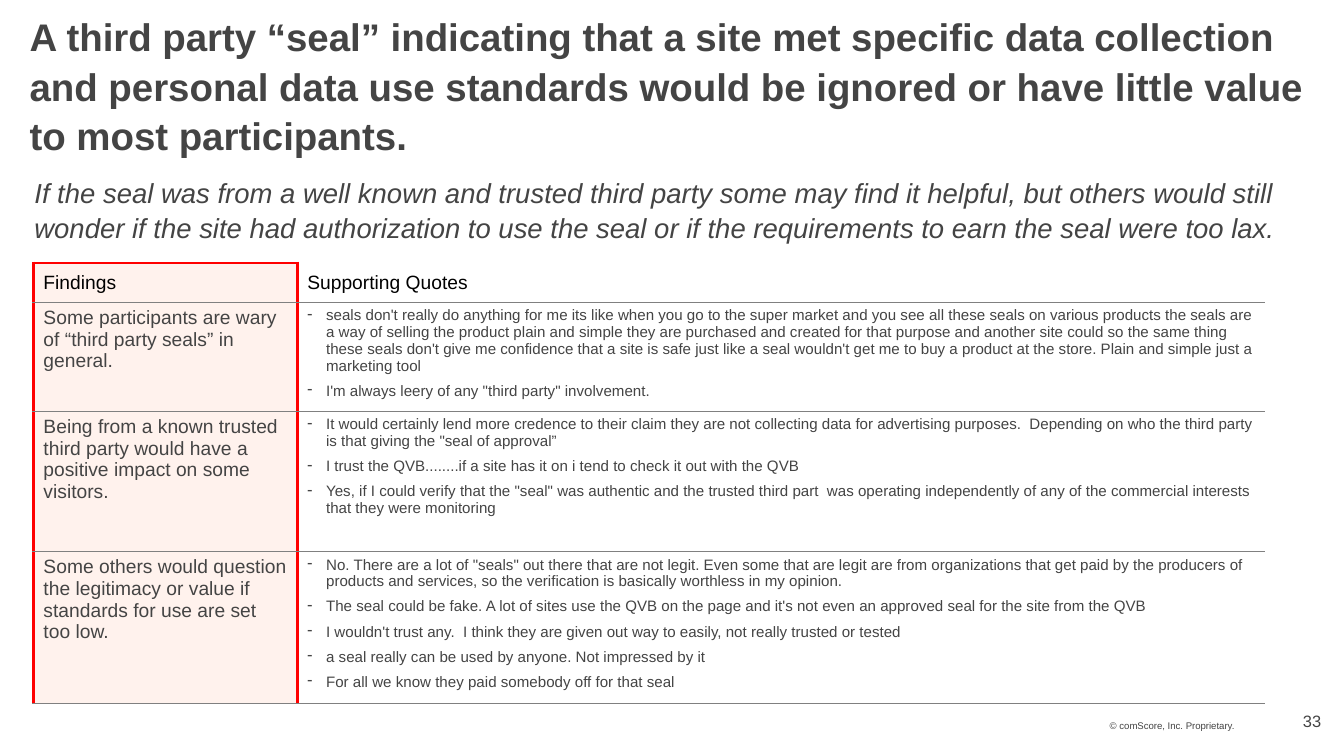
from lxml import etree
from pptx import Presentation, util as u
from pptx.dml.color import RGBColor
from pptx.enum import text
from pptx.oxml.ns import qn

PX = 9144  # 100 px to the inch
COLORS = {"ink": "444444", "head": "000000", "red": "FF0000", "rule": "808080", "peach": "FFCFB8"}


def add_run(p, words, size, color="ink", bold=False, italic=False):
    r = p.add_run()
    r.text = words
    f = r.font
    f.name, f.size, f.bold, f.italic = "Arial", u.Pt(size), bold, italic
    f.color.rgb = RGBColor.from_string(COLORS[color])


def set_border(cell, side, color, width):
    """Draw one cell side (L, R, T or B), or clear it when color is None."""
    tcPr = cell._tc.get_or_add_tcPr()
    ln = etree.SubElement(tcPr, qn("a:ln" + side), w=str(u.Pt(width)))
    if color is None:
        etree.SubElement(ln, qn("a:noFill"))
    else:
        fill = etree.SubElement(ln, qn("a:solidFill"))
        etree.SubElement(fill, qn("a:srgbClr"), val=COLORS[color])


findings = [
    ("Some participants are wary of “third party seals” in general.", [
        "seals don't really do anything for me its like when you go to the super market and you see all "
        "these seals on various products the seals are a way of selling the product plain and simple they "
        "are purchased and created for that purpose and another site could so the same thing these seals "
        "don't give me confidence that a site is safe just like a seal wouldn't get me to buy a product at "
        "the store. Plain and simple just a marketing tool",
        "I'm always leery of any \"third party\" involvement.",
    ]),
    ("Being from a known trusted third party would have a positive impact on some visitors.", [
        "It would certainly lend more credence to their claim they are not collecting data for advertising "
        "purposes.  Depending on who the third party is that giving the \"seal of approval”",
        "I trust the QVB........if a site has it on i tend to check it out with the QVB",
        "Yes, if I could verify that the \"seal\" was authentic and the trusted third part  was operating "
        "independently of any of the commercial interests that they were monitoring",
    ]),
    ("Some others would question the legitimacy or value if standards for use are set too low.", [
        "No. There are a lot of \"seals\" out there that are not legit. Even some that are legit are from "
        "organizations that get paid by the producers of products and services, so the verification is "
        "basically worthless in my opinion.",
        "The seal could be fake. A lot of sites use the QVB on the page and it's not even an approved seal "
        "for the site from the QVB",
        "I wouldn't trust any.  I think they are given out way to easily, not really trusted or tested",
        "a seal really can be used by anyone. Not impressed by it",
        "For all we know they paid somebody off for that seal",
    ]),
]

prs = Presentation()
prs.slide_width, prs.slide_height = 1360 * PX, 765 * PX
s = prs.slides.add_slide(prs.slide_layouts[5])

# Title
title = s.shapes.title
title.left, title.top, title.width, title.height = (v * PX for v in (18, 14, 1342, 148))
tf = title.text_frame
tf.auto_size, tf.word_wrap = text.MSO_AUTO_SIZE.NONE, True
tf.vertical_anchor = text.MSO_ANCHOR.MIDDLE
tf.margin_left = tf.margin_right = 12 * PX
tf.margin_top, tf.margin_bottom = 0, 6 * PX
p = tf.paragraphs[0]
p.alignment, p.line_spacing = text.PP_ALIGN.LEFT, 1.07
add_run(p, "A third party “seal” indicating that a site met specific data collection and personal data use "
           "standards would be ignored or have little value to most participants.", 28, bold=True)

# Subtitle
sp = s.shapes.add_textbox(*(v * PX for v in (25, 171, 1324, 77)))
tf = sp.text_frame
tf.word_wrap = True
p = tf.paragraphs[0]
p.line_spacing = 1.07
add_run(p, "If the seal was from a well known and trusted third party some may find it helpful, but others "
           "would still wonder if the site had authorization to use the seal or if the requirements to earn "
           "the seal were too lax.", 20, italic=True)

# Findings table
table = s.shapes.add_table(4, 2, *(v * PX for v in (34, 266, 1246, 405))).table
table.first_row = table.horz_banding = False
for column, width in zip(table.columns, (267, 979)):
    column.width = width * PX
for row, height in zip(table.rows, (40, 101, 142, 142)):
    row.height = height * PX

for i in range(4):
    for j in range(2):
        cell = table.cell(i, j)
        cell.margin_left = cell.margin_right = 10 * PX
        cell.margin_top = cell.margin_bottom = 5 * PX
        cell.vertical_anchor = text.MSO_ANCHOR.TOP if i else text.MSO_ANCHOR.MIDDLE
        set_border(cell, "L", "red", 2.25)
        set_border(cell, "R", None if j else "red", 2.25)
        if i:
            set_border(cell, "T", "rule", 1)
        else:
            set_border(cell, "T", None if j else "red", 2.25)
        set_border(cell, "B", "rule", 1)
        if j:
            cell.fill.background()
        else:
            cell.fill.solid()
            cell.fill.fore_color.rgb = RGBColor.from_string(COLORS["peach"])
            tint = cell._tc.tcPr.find(".//" + qn("a:solidFill") + "/" + qn("a:srgbClr") + "[@val='FFCFB8']")
            etree.SubElement(tint, qn("a:alpha"), val="25000")

for j, heading in enumerate(("Findings", "Supporting Quotes")):
    add_run(table.cell(0, j).text_frame.paragraphs[0], heading, 14, "head")

for i, (finding, quotes) in enumerate(findings, 1):
    p = table.cell(i, 0).text_frame.paragraphs[0]
    p.space_after = u.Pt(10)
    add_run(p, finding, 14)
    tf = table.cell(i, 1).text_frame
    for n, quote in enumerate(quotes):
        p = tf.add_paragraph() if n else tf.paragraphs[0]
        pPr = p._p.get_or_add_pPr()
        pPr.set("marL", str(19 * PX))
        pPr.set("indent", str(-19 * PX))
        etree.SubElement(pPr, qn("a:buChar"), char="-")
        p.space_after = u.Pt(6)
        add_run(p, quote, 11)

# Footer
for box, margin, words, size, align, spacing in (
    ((1123, 695, 150, 51), 0, "© comScore, Inc. Proprietary.", 7, text.PP_ALIGN.LEFT, u.Pt(7.9)),
    ((1252, 706, 109, 40), 24, "33", 12, text.PP_ALIGN.RIGHT, None),
):
    tf = s.shapes.add_textbox(*(v * PX for v in box)).text_frame
    tf.word_wrap = True
    tf.vertical_anchor = text.MSO_ANCHOR.BOTTOM
    tf.margin_left = tf.margin_right = margin * PX
    tf.margin_top = tf.margin_bottom = 6 * PX
    p = tf.paragraphs[0]
    p.alignment, p.line_spacing = align, spacing
    add_run(p, words, size)

prs.save("out.pptx")
